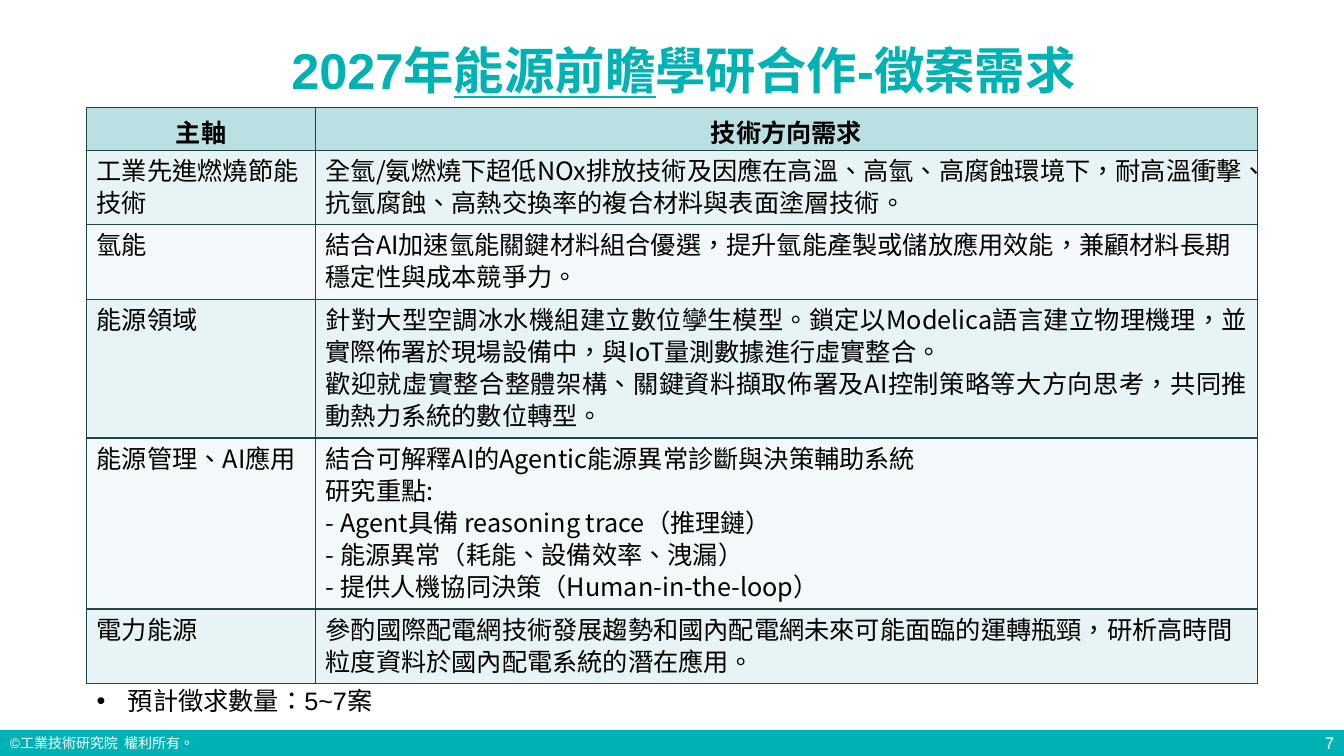
from collections import namedtuple

from lxml.etree import SubElement
from pptx import Presentation
from pptx.dml.color import RGBColor
from pptx.enum.lang import MSO_LANGUAGE_ID
from pptx.enum.shapes import MSO_SHAPE
from pptx.enum.text import MSO_ANCHOR, PP_ALIGN
from pptx.oxml.ns import qn
from pptx.util import Inches, Pt

WIDTH, HEIGHT = Inches(13.33), Inches(7.5)
COLORS = {
    "teal": "00B2B3", "white": "FFFFFF", "black": "000000", "rule": "1E4649",
    "header": "BBE0E3", "odd": "E7F3F4", "even": "F3F9FA",
}
BODY_FONT = "Noto Sans CJK SC"
Box = namedtuple("Box", "left top width height")

TITLE = [("2027年", False), ("能源前瞻", True), ("學研合作-徵案需求", False)]
HEADINGS = ["主軸", "技術方向需求"]
Topic = namedtuple("Topic", "axis needs height align", defaults=[PP_ALIGN.LEFT])
TOPICS = [
    Topic("工業先進燃燒節能技術",
          ["全氫/氨燃燒下超低NOx排放技術及因應在高溫、高氫、高腐蝕環境下，"
           "耐高溫衝擊、抗氫腐蝕、高熱交換率的複合材料與表面塗層技術。"], 9.6),
    Topic("氫能",
          ["結合AI加速氫能關鍵材料組合優選，提升氫能產製或儲放應用效能，"
           "兼顧材料長期穩定性與成本競爭力。"], 9.6),
    Topic("能源領域",
          ["針對大型空調冰水機組建立數位孿生模型。鎖定以Modelica語言建立物理機理，"
           "並實際佈署於現場設備中，與IoT量測數據進行虛實整合。",
           "歡迎就虛實整合整體架構、關鍵資料擷取佈署及AI控制策略等大方向思考，"
           "共同推動熱力系統的數位轉型。"], 18, PP_ALIGN.JUSTIFY),
    Topic("能源管理、AI應用",
          ["結合可解釋AI的Agentic能源異常診斷與決策輔助系統",
           "研究重點:",
           "- Agent具備 reasoning trace（推理鏈）",
           "- 能源異常（耗能、設備效率、洩漏）",
           "- 提供人機協同決策（Human-in-the-loop）"], 22.13, PP_ALIGN.JUSTIFY),
    Topic("電力能源",
          ["參酌國際配電網技術發展趨勢和國內配電網未來可能面臨的運轉瓶頸，"
           "研析高時間粒度資料於國內配電系統的潛在應用。"], 9.6),
]


def across(columns):
    """Convert columns of a 100-column grid to a length."""
    return round(WIDTH * columns / 100)


def down(rows):
    """Convert rows of a 100-row grid to a length."""
    return round(HEIGHT * rows / 100)


def place(box):
    """Return the lengths of a grid box."""
    return across(box.left), down(box.top), across(box.width), down(box.height)


def color(name):
    """Look up a palette colour."""
    return RGBColor.from_string(COLORS[name])


def write(paragraph, text, size=18, font="Arial", ink="black", bold=False,
          underline=False, align=PP_ALIGN.LEFT, spacing=None):
    """Add a formatted run to a paragraph."""
    paragraph.alignment = align
    if spacing:
        paragraph.line_spacing = Pt(spacing)
    run = paragraph.add_run()
    run.text = text
    run.font.size, run.font.name = Pt(size), font
    run.font.bold, run.font.underline = bold, underline
    run.font.color.rgb = color(ink)
    run.font.language_id = MSO_LANGUAGE_ID.TRADITIONAL_CHINESE


def add_frame(slide, box, anchor=MSO_ANCHOR.TOP):
    """Add a wrapping text frame in a grid box."""
    frame = slide.shapes.add_textbox(*place(box)).text_frame
    frame.word_wrap = True
    frame.vertical_anchor = anchor
    return frame


def add_title(slide, box):
    """Add the title with its underlined theme."""
    heading = add_frame(slide, box).paragraphs[0]
    for text, underline in TITLE:
        write(heading, text, size=36, ink="teal", bold=True,
              underline=underline, align=PP_ALIGN.CENTER)


def fill_cell(cell, lines, fill, **style):
    """Write, border and fill one table cell."""
    for index, line in enumerate(lines):
        frame = cell.text_frame
        paragraph = frame.add_paragraph() if index else frame.paragraphs[0]
        write(paragraph, line, font=BODY_FONT, **style)
    properties = cell._tc.get_or_add_tcPr()
    for side in ("lnL", "lnR", "lnT", "lnB"):
        border = SubElement(properties, qn(f"a:{side}"), w=str(Pt(1)))
        solid = SubElement(border, qn("a:solidFill"))
        SubElement(solid, qn("a:srgbClr"), val=COLORS["rule"])
    cell.fill.solid()
    cell.fill.fore_color.rgb = color(fill)


def add_needs_table(slide, box):
    """Add the table of axes and technical needs."""
    table = slide.shapes.add_table(len(TOPICS) + 1, 2, *place(box)).table
    axis_width = 17.03
    table.columns[0].width = across(axis_width)
    table.columns[1].width = across(box.width - axis_width)
    table.rows[0].height = down(5.6)
    for column, heading in enumerate(HEADINGS):
        fill_cell(table.cell(0, column), [heading], "header",
                  bold=True, align=PP_ALIGN.CENTER)
    for row, topic in enumerate(TOPICS, 1):
        table.rows[row].height = down(topic.height)
        fill = "odd" if row % 2 else "even"
        fill_cell(table.cell(row, 0), [topic.axis], fill, spacing=23)
        fill_cell(table.cell(row, 1), topic.needs, fill,
                  spacing=23, align=topic.align)


def add_quota(slide, box):
    """Add the bulleted number of planned projects."""
    quota = add_frame(slide, box).paragraphs[0]
    properties = quota._p.get_or_add_pPr()
    indent = Inches(0.31)
    properties.set("marL", str(indent))
    properties.set("indent", str(-indent))
    SubElement(properties, qn("a:buFont"), typeface="Arial")
    SubElement(properties, qn("a:buChar"), char="•")
    write(quota, "預計徵求數量：5~7案")


def add_footer(slide, box):
    """Add the footer band, copyright line and page number."""
    band = slide.shapes.add_shape(MSO_SHAPE.RECTANGLE, *place(box))
    band.shadow.inherit = False
    band.fill.solid()
    band.fill.fore_color.rgb = color("teal")
    band.line.fill.background()
    rights = add_frame(slide, box._replace(width=29.26))
    write(rights.paragraphs[0], "©工業技術研究院  權利所有。", size=10, ink="white")
    number_width = 6.23
    number_box = box._replace(left=box.left + box.width - number_width,
                              width=number_width)
    number = add_frame(slide, number_box, MSO_ANCHOR.MIDDLE)
    write(number.paragraphs[0], "7", size=12, ink="white", align=PP_ALIGN.RIGHT)


def main():
    """Build and save the slide."""
    deck = Presentation()
    deck.slide_width, deck.slide_height = WIDTH, HEIGHT
    slide = deck.slides.add_slide(deck.slide_layouts[6])
    add_footer(slide, Box(0, 96.53, 100, 3.47))
    add_title(slide, Box(5.55, 4.53, 90.62, 13.73))
    add_quota(slide, Box(6.45, 90, 50.41, 5.33))
    add_needs_table(slide, Box(6.45, 14.27, 87.1, 74.53))
    deck.save("out.pptx")


if __name__ == "__main__":
    main()
